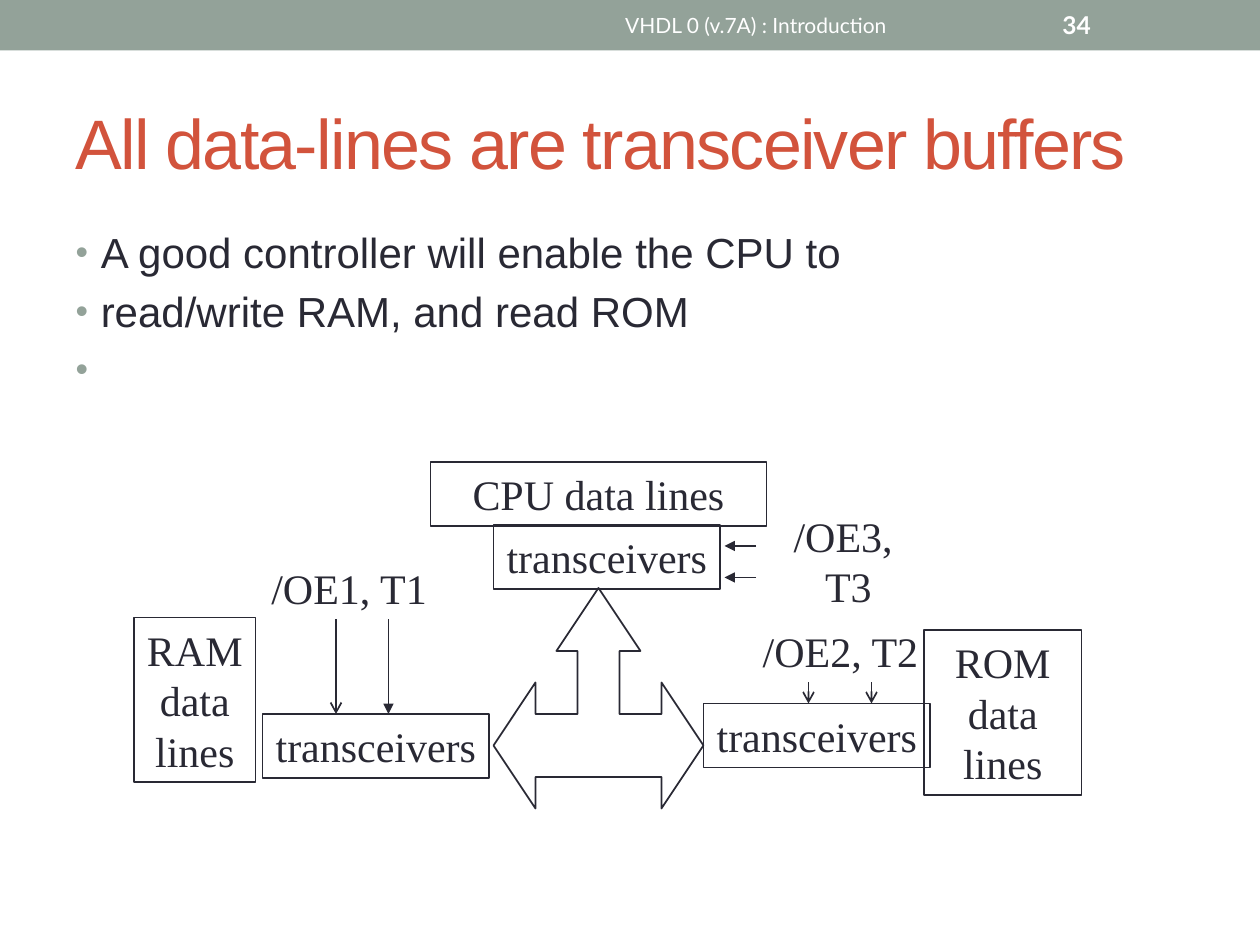
import pptx
import pptx.util
import pptx.dml.color
import pptx.enum.shapes
import pptx.enum.text
import pptx.oxml
import pptx.oxml.ns

INK, SAGE, RUST, WHITE = "292934", "93A299", "D2533C", "FFFFFF"
ALIGN = pptx.enum.text.PP_ALIGN
ANCHOR = pptx.enum.text.MSO_ANCHOR
RECTANGLE = pptx.enum.shapes.MSO_SHAPE.RECTANGLE
STRAIGHT = pptx.enum.shapes.MSO_CONNECTOR.STRAIGHT

presentation = pptx.Presentation()
presentation.slide_width = pptx.util.Inches(10)
presentation.slide_height = pptx.util.Inches(7.5)
CELL = presentation.slide_width // 120


def paint(fill, colour):
    fill.solid()
    fill.fore_color.rgb = pptx.dml.color.RGBColor.from_string(colour)


def write(shape, text, box=None, font="Times New Roman", size=24, colour=INK, bold=False,
          align=ALIGN.CENTER, anchor=ANCHOR.MIDDLE, wrap=False):
    if box:
        shape.left, shape.top, shape.width, shape.height = [round(n * CELL) for n in box]
    frame = shape.text_frame
    frame.text = text
    frame.auto_size = pptx.enum.text.MSO_AUTO_SIZE.NONE
    frame.word_wrap = wrap
    frame.vertical_anchor = anchor
    for paragraph in frame.paragraphs:
        paragraph.alignment = align
        for run in paragraph.runs:
            run.font.name = font
            run.font.size = pptx.util.Pt(size)
            run.font.bold = bold
            paint(run.font.fill, colour)
    return frame.paragraphs


slide = presentation.slides.add_slide(presentation.slide_layouts[1])
shapes = slide.shapes
title, body = slide.placeholders

banner = shapes.add_shape(RECTANGLE, 0, 0, 120 * CELL, round(4.8 * CELL))
banner.shadow.inherit = False
paint(banner.fill, SAGE)
banner.line.fill.background()

heading = write(title, "All data-lines are transceiver buffers", (6, 7, 108, 13),
                font="Arial", size=40, colour=RUST, align=ALIGN.LEFT, wrap=True)
heading[0].runs[0]._r.get_or_add_rPr().set("spc", "-100")

bullets = write(body, "A good controller will enable the CPU to\nread/write RAM, and read ROM\n ",
                (6, 21, 108, 64), font="Arial", align=ALIGN.LEFT, anchor=ANCHOR.TOP, wrap=True)
namespace = pptx.oxml.ns.nsdecls("a")
for paragraph in bullets:
    properties = paragraph._p.get_or_add_pPr()
    properties.set("marL", str(pptx.util.Inches(0.2)))
    properties.set("indent", str(-pptx.util.Inches(0.2)))
    for markup in (f'<a:buClr {namespace}><a:srgbClr val="{SAGE}"/></a:buClr>',
                   f'<a:buSzPct {namespace} val="85000"/>',
                   f'<a:buFont {namespace} typeface="Arial"/>',
                   f'<a:buChar {namespace} char="•"/>'):
        properties.append(pptx.oxml.parse_xml(markup))

write(shapes.add_textbox(0, 0, 0, 0), "VHDL 0 (v.7A) : Introduction", (45, 0.24, 54, 4.32),
      font="Lato", size=12, colour=WHITE, wrap=True)
write(shapes.add_textbox(0, 0, 0, 0), "34", (100, 0.24, 14, 4.32),
      font="Lato", size=14, colour=WHITE, bold=True, align=ALIGN.LEFT, wrap=True)

left_half = [(53, 62), (55, 62), (55, 68), (51, 68), (51, 65), (47, 71), (51, 77), (51, 74)]
right_half = [(114 - column, row) for column, row in reversed(left_half)]
builder = shapes.build_freeform(57, 56, scale=CELL)
builder.add_line_segments(left_half + right_half, close=True)
bus_arrow = builder.convert_to_shape()
bus_arrow.shadow.inherit = False
bus_arrow.fill.background()
paint(bus_arrow.line.fill, INK)
bus_arrow.line.width = pptx.util.Pt(1)

boxes = [
    ("CPU data lines", 41, 44, 32, 6.1),
    ("transceivers", 67, 67, 21.6, 6.1),
    ("ROM\ndata\nlines", 88, 60, 15, 15.7),
    ("RAM\ndata\nlines", 12.75, 58.8, 11.6, 15.7),
    ("transceivers", 25, 68, 21.6, 6.1),
    ("transceivers", 47, 50, 21.6, 6.1),
]
for text, *box in boxes:
    block = shapes.add_shape(RECTANGLE, 0, 0, CELL, CELL)
    block.shadow.inherit = False
    block.fill.background()
    paint(block.line.fill, INK)
    block.line.width = pptx.util.Pt(1)
    write(block, text, box)

signals = [
    ("/OE1, T1", 24.6, 53, 17.3, 6),
    ("/OE2, T2", 71.4, 59, 17.3, 6),
    ("/OE3, \nT3", 74.4, 48, 12.8, 10.8),
]
for text, *box in signals:
    write(shapes.add_textbox(0, 0, 0, 0), text, box)

arrows = [
    (32, 59, 32, 68, "arrow"),
    (37, 59, 37, 68, "triangle"),
    (77, 65, 77, 67, "arrow"),
    (83, 65, 83, 67, "arrow"),
    (72, 52, 69, 52, "triangle"),
    (72, 55, 69, 55, "triangle"),
]
for *ends, head in arrows:
    arrow = shapes.add_connector(STRAIGHT, *[n * CELL for n in ends])
    paint(arrow.line.fill, INK)
    arrow.line.width = pptx.util.Pt(1)
    arrow.line._get_or_add_ln().append(
        pptx.oxml.parse_xml(f'<a:tailEnd {namespace} type="{head}"/>'))
    arrow._element.spPr.append(pptx.oxml.parse_xml(f"<a:effectLst {namespace}/>"))

presentation.save("out.pptx")
